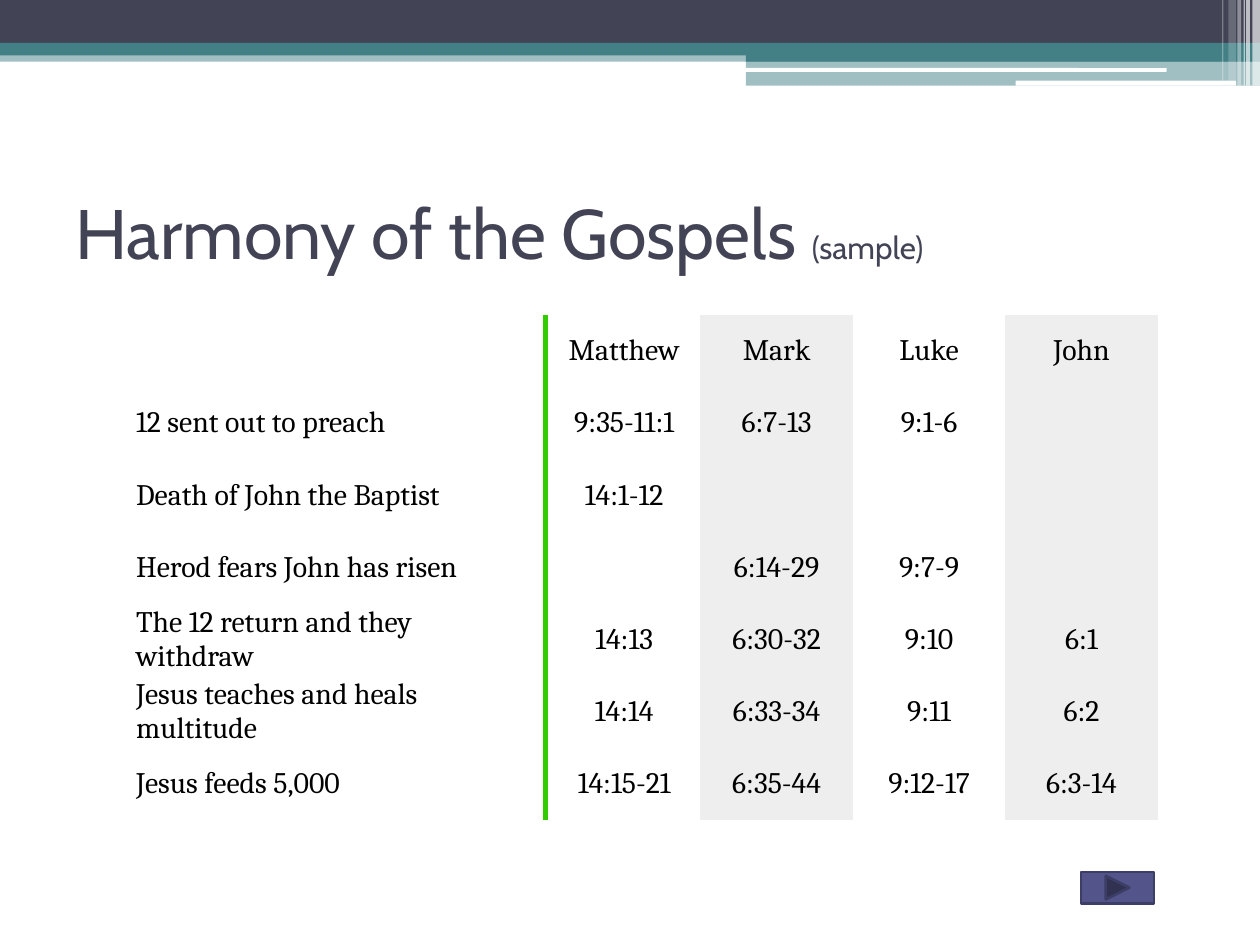
from lxml.etree import SubElement
from pptx import Presentation
from pptx.dml.color import RGBColor
from pptx.enum.shapes import MSO_SHAPE
from pptx.enum.text import MSO_ANCHOR, PP_ALIGN
from pptx.oxml import parse_xml
from pptx.oxml.ns import nsdecls, qn
from pptx.util import Inches, Pt

WIDE, HIGH = Inches(10), Inches(7.5)
COLS, ROWS = 1000, 750
INK, TEAL, WHITE, GREY, GREEN = "424456", "438086", "FFFFFF", "EEEEEE", "33CC00"

BARS = [
    (0, 40, 1000, 9, TEAL, 50),
    (0, 0, 1000, 34, INK, 100),
    (0, 34, 1000, 10, TEAL, 100),
    (592, 39, 408, 10, TEAL, 100),
    (592, 48, 408, 20, TEAL, 50),
]
SLITS = [(591, 54, 335, 3), (806, 64, 175, 4)]
STRIPES = [(994, 6, 68, 65), (989, 3, 68, 65), (987, 1, 68, 60),
           (982, 3, 68, 40), (975, 6, 64, 20), (970, 1, 64, 30)]

WIDTHS = [317, 6, 4] + [121] * 4 + [13]
FILLS = [WHITE, WHITE, GREEN, WHITE, GREY, WHITE, GREY, WHITE]
EVENTS = [
    ("", "Matthew", "Mark", "Luke", "John"),
    ("12 sent out to preach", "9:35-11:1", "6:7-13", "9:1-6", ""),
    ("Death of John the Baptist", "14:1-12", "", "", ""),
    ("Herod fears John has risen", "", "6:14-29", "9:7-9", ""),
    ("The 12 return and they withdraw", "14:13", "6:30-32", "9:10", "6:1"),
    ("Jesus teaches and heals multitude", "14:14", "6:33-34", "9:11", "6:2"),
    ("Jesus feeds 5,000", "14:15-21", "6:35-44", "9:12-17", "6:3-14"),
]


def across(n):
    """Turn grid columns into a length."""
    return round(WIDE * n / COLS)


def down(n):
    """Turn grid rows into a length."""
    return round(HIGH * n / ROWS)


def place(box, x=0, y=0, w=None, h=None):
    """Give the lengths of a part that lies inside a box of the grid."""
    left, top, wide, high = box
    return (across(left + x), down(top + y),
            across(wide if w is None else w), down(high if h is None else h))


def paint(fill, tone, alpha=100):
    """Fill with a hex colour at a percentage of opacity."""
    fill.solid()
    fill.fore_color.rgb = RGBColor.from_string(tone)
    if alpha < 100:
        node = fill.fore_color._xFill.find(qn("a:srgbClr"))
        SubElement(node, qn("a:alpha")).set("val", str(alpha * 1000))


def style(run, font, size, tone):
    """Set the font, size and colour of a run."""
    run.font.name = font
    run.font.size = Pt(size)
    run.font.color.rgb = RGBColor.from_string(tone)


def add_form(slide, kind, spot, tone, alpha=100):
    """Add a flat preset shape without an outline."""
    form = slide.shapes.add_shape(kind, *spot)
    form.shadow.inherit = False
    form.line.fill.background()
    paint(form.fill, tone, alpha)
    return form


def add_band(slide, box):
    """Draw the bars, slits and stripes of the top band."""
    for *spot, tone, alpha in BARS:
        add_form(slide, MSO_SHAPE.RECTANGLE, place(box, *spot), tone, alpha)
    for spot in SLITS:
        add_form(slide, MSO_SHAPE.ROUNDED_RECTANGLE, place(box, *spot), WHITE)
    for x, wide, high, alpha in STRIPES:
        add_form(slide, MSO_SHAPE.RECTANGLE, place(box, x, 0, wide, high), WHITE, alpha)


def add_title(slide, box):
    """Write the title with its small remark."""
    frame = slide.shapes.add_textbox(*place(box)).text_frame
    frame.word_wrap = True
    frame.vertical_anchor = MSO_ANCHOR.MIDDLE
    for text, size in (("Harmony of the Gospels ", 40), ("(sample)", 18)):
        run = frame.paragraphs[0].add_run()
        run.text = text
        style(run, "Cabin", size, INK)


def set_cell(cell, text, tone, align):
    """Fill a cell, clear its borders and write its text."""
    cell.margin_left = cell.margin_right = cell.margin_top = cell.margin_bottom = 0
    cell.vertical_anchor = MSO_ANCHOR.MIDDLE
    paint(cell.fill, tone)
    for spot, side in enumerate("LRTB"):
        edge = f'<a:ln{side} {nsdecls("a")} w="0"><a:noFill/></a:ln{side}>'
        cell._tc.get_or_add_tcPr().insert(spot, parse_xml(edge))
    cell.text_frame.text = text
    para = cell.text_frame.paragraphs[0]
    para.alignment = align
    for run in para.runs:
        style(run, "Cambria", 17, "000000")


def add_chart(slide, box):
    """Build the table of events by gospel."""
    table = slide.shapes.add_table(len(EVENTS), len(WIDTHS), *place(box)).table
    table.first_row = table.horz_banding = False
    for col, wide in zip(table.columns, WIDTHS):
        col.width = across(wide)
    for row, (event, *verses) in zip(table.rows, EVENTS):
        row.height = down(box[3] / len(EVENTS))
        texts = [event, "", "", *verses, ""]
        for n, (cell, text, tone) in enumerate(zip(row.cells, texts, FILLS)):
            set_cell(cell, text, tone, PP_ALIGN.CENTER if n else PP_ALIGN.LEFT)


def add_button(slide, box):
    """Draw the button that points onward."""
    kind = MSO_SHAPE.ACTION_BUTTON_FORWARD_OR_NEXT
    button = add_form(slide, kind, place(box), "53548A")
    paint(button.line.fill, "3D3E66")
    button.line.width = Pt(1.5)


def main():
    """Build the slide and save it."""
    deck = Presentation()
    deck.slide_width, deck.slide_height = WIDE, HIGH
    slide = deck.slides.add_slide(deck.slide_layouts[6])
    add_band(slide, (0, 0, 1000, 68))
    add_chart(slide, (108, 250, 825, 401))
    add_title(slide, (50, 125, 900, 117))
    add_button(slide, (858, 692, 58, 25))
    deck.save("out.pptx")


if __name__ == "__main__":
    main()
